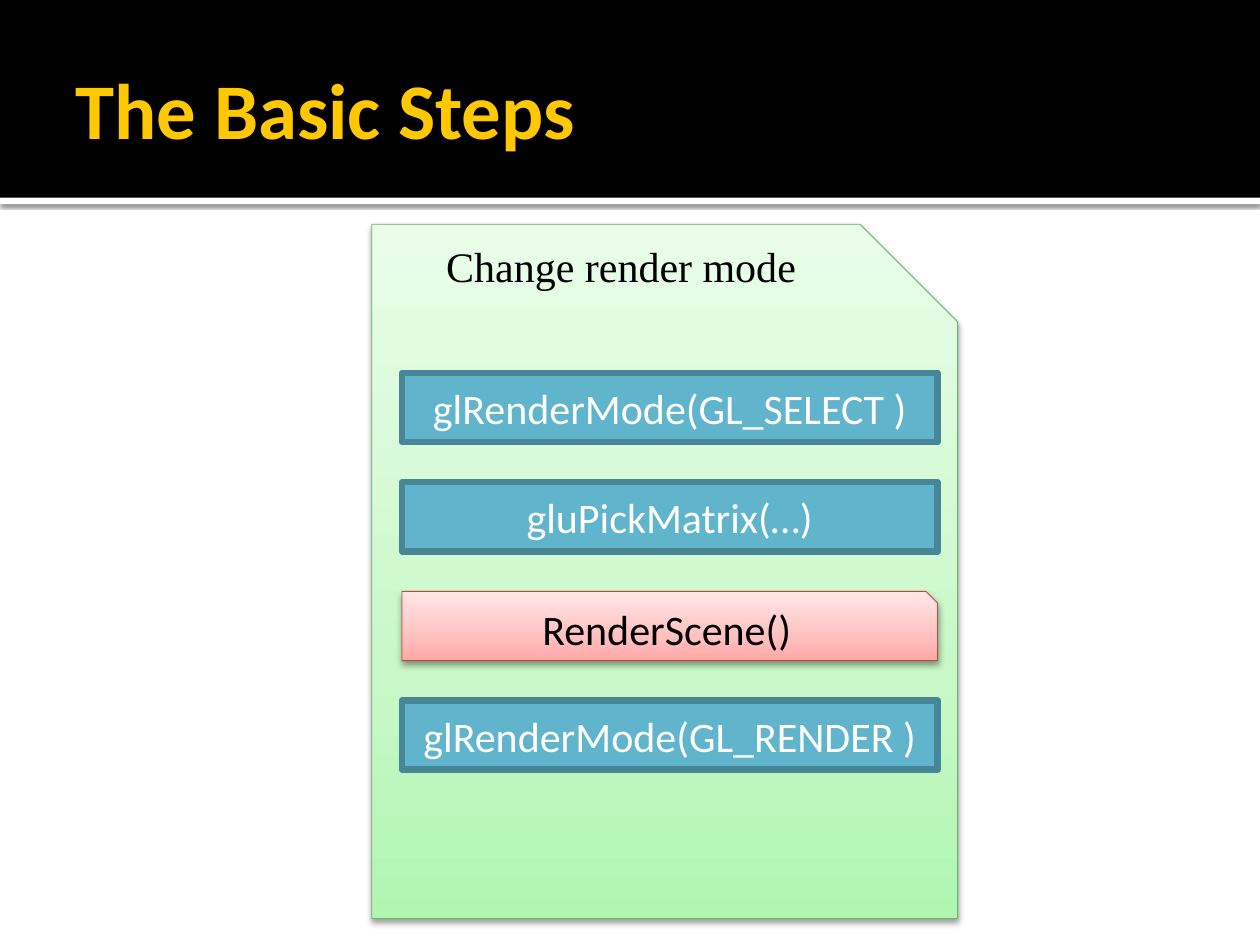
import copy

import lxml.etree
import pptx
import pptx.dml.color
import pptx.enum.shapes
import pptx.enum.text
import pptx.oxml.ns
import pptx.util

Inches = pptx.util.Inches
Pt = pptx.util.Pt
RGBColor = pptx.dml.color.RGBColor
Kind = pptx.enum.shapes.MSO_SHAPE
Align = pptx.enum.text.PP_ALIGN
Anchor = pptx.enum.text.MSO_ANCHOR
qn = pptx.oxml.ns.qn

BLACK = RGBColor(0x00, 0x00, 0x00)
WHITE = RGBColor(0xFF, 0xFF, 0xFF)
GOLD = RGBColor(0xFF, 0xC8, 0x00)
BLUE = RGBColor(0x60, 0xB5, 0xCC)
TEAL = RGBColor(0x47, 0x86, 0x97)
GREEN = RGBColor(0x67, 0xB5, 0x69)
RED = RGBColor(0xC5, 0x43, 0x42)
MINTS = (RGBColor(0xB0, 0xF6, 0xB1), RGBColor(0xC8, 0xF8, 0xC8),
         RGBColor(0xE9, 0xFD, 0xE9))
PINKS = (RGBColor(0xFF, 0xA7, 0xA7), RGBColor(0xFF, 0xC1, 0xC0),
         RGBColor(0xFF, 0xE7, 0xE7))

CALL = {"kind": Kind.RECTANGLE, "fill": BLUE, "line": (TEAL, 3.78), "ink": WHITE}
SCENE = {"kind": Kind.SNIP_1_RECTANGLE, "fill": PINKS, "line": (RED, 0.5),
         "shade": (38, 3.5, 2), "ink": BLACK}
STEPS = (
    ("glRenderMode(GL_SELECT )", CALL),
    ("gluPickMatrix(…)", CALL),
    ("RenderScene()", SCENE),
    ("glRenderMode(GL_RENDER )", CALL),
)
TOP, LAST = 2.96, 5.56


def set_all(item, form):
    for name, value in form.items():
        setattr(item, name, value)


def write(frame, text, color, size=24, font="Calibri", bold=False,
          align=Align.CENTER):
    para = frame.paragraphs[0]
    para.alignment = align
    run = para.add_run()
    run.text = text
    set_all(run.font, {"name": font, "size": Pt(size), "bold": bold})
    run.font.color.rgb = color


def blend(fill, colors):
    fill.gradient()
    fill.gradient_angle = 90
    first = fill._fill._gradFill.find(qn("a:gsLst"))
    first.append(copy.deepcopy(first[-1]))
    for stop, place, color in zip(fill.gradient_stops, (0, 0.35, 1), colors):
        stop.position = place
        stop.color.rgb = color


def cast(shape, alpha, blur, dist):
    effects = shape._element.spPr.find(qn("a:effectLst"))
    form = {"blurRad": Pt(blur), "dist": Pt(dist), "dir": 90 * 60000,
            "algn": "t", "rotWithShape": 0}
    shade = lxml.etree.SubElement(effects, qn("a:outerShdw"))
    for name, value in form.items():
        shade.set(name, str(int(value)) if name != "algn" else value)
    color = lxml.etree.SubElement(shade, qn("a:srgbClr"), val=str(BLACK))
    lxml.etree.SubElement(color, qn("a:alpha"), val=str(alpha * 1000))


def add_box(slide, area, kind, fill, line=None, shade=None, text=None, ink=None):
    box = slide.shapes.add_shape(kind, *map(Inches, area))
    if isinstance(fill, RGBColor):
        box.fill.solid()
        box.fill.fore_color.rgb = fill
    else:
        blend(box.fill, fill)
    if line:
        box.line.color.rgb, box.line.width = line[0], Pt(line[1])
    else:
        box.line.fill.background()
    box.shadow.inherit = False
    if shade:
        cast(box, *shade)
    if text:
        box.text_frame.vertical_anchor = Anchor.MIDDLE
        write(box.text_frame, text, ink)


def add_title(slide, text):
    title = slide.shapes.title
    slide.shapes._spTree.append(title._element)
    set_all(title, {"left": Inches(0.5), "top": Inches(0.17),
                    "width": Inches(9), "height": Inches(1.37)})
    frame = title.text_frame
    set_all(frame, {"vertical_anchor": Anchor.MIDDLE, "word_wrap": True,
                    "margin_left": Inches(0.1), "margin_right": Inches(0.05),
                    "margin_top": Inches(0.05), "margin_bottom": Inches(0.05)})
    write(frame, text, GOLD, 45, bold=True, align=Align.LEFT)


def add_label(slide, area, text):
    frame = slide.shapes.add_textbox(*map(Inches, area)).text_frame
    set_all(frame, {"word_wrap": False,
                    "auto_size": pptx.enum.text.MSO_AUTO_SIZE.SHAPE_TO_FIT_TEXT})
    write(frame, text, BLACK, font="Times New Roman")


def main():
    deck = pptx.Presentation()
    set_all(deck, {"slide_width": Inches(10), "slide_height": Inches(7.5)})
    slide = deck.slides.add_slide(deck.slide_layouts[5])
    add_box(slide, (0, 1.57, 10, 0.05), Kind.RECTANGLE, WHITE,
            shade=(60, 2.5, 0.8))
    add_box(slide, (0, 0, 10, 1.57), Kind.RECTANGLE, BLACK)
    add_title(slide, "The Basic Steps")
    add_box(slide, (2.95, 1.78, 4.65, 5.51), Kind.SNIP_1_RECTANGLE, MINTS,
            (GREEN, 0.5), (38, 3.5, 2))
    pitch = (LAST - TOP) / (len(STEPS) - 1)
    for row, (text, form) in enumerate(STEPS):
        add_box(slide, (3.19, TOP + row * pitch, 4.25, 0.55), text=text, **form)
    add_label(slide, (3.43, 1.86, 3, 0.51), "Change render mode")
    deck.save("out.pptx")


if __name__ == "__main__":
    main()
